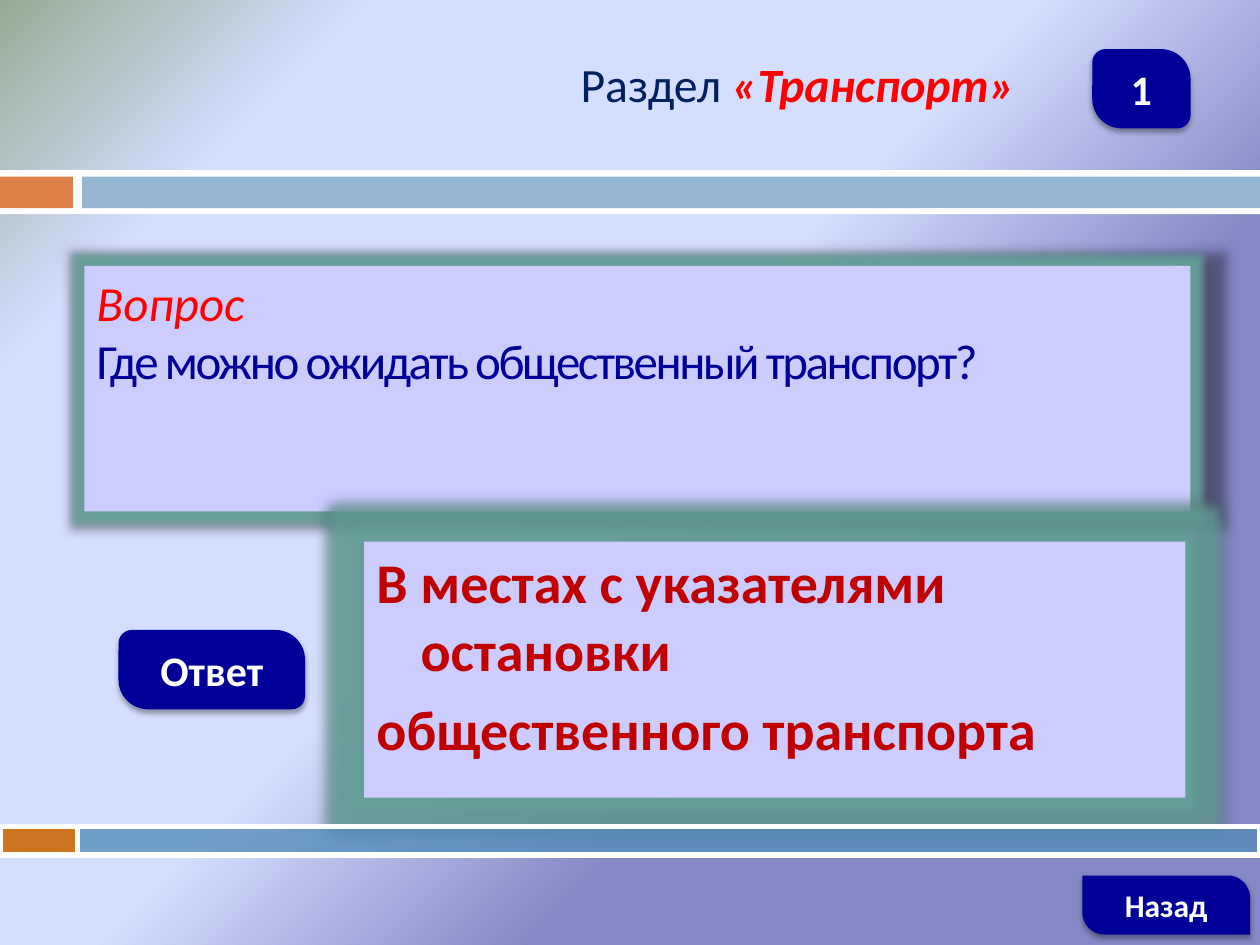
from pptx import Presentation
from pptx.dml.color import RGBColor
from pptx.enum.shapes import MSO_SHAPE
from pptx.enum.text import MSO_ANCHOR, MSO_AUTO_SIZE, PP_ALIGN
from pptx.oxml import parse_xml
from pptx.oxml.ns import nsdecls
from pptx.util import Cm, Pt

FONT = "Calibri"
C = {"white": "FFFFFF", "black": "000000", "orange": "DD8047", "blue": "94B6D2",
     "panel": "CCCCFF", "navy": "000099", "title": "002060", "red": "FF0000",
     "answer": "C00000", "glow": "66A09A", "rust": "CC6600", "steel": "558BB8"}
BACKGROUND = [(33, "8488C4"), (53, "D4DEFF"), (83, "D4DEFF"), (100, "96AB94")]

# Boxes are left, top, width, height in cm
TITLE_BOX = (10.72, 0.79, 10.72, 1.78)
TITLE = [("Раздел ", {"size": 27.3, "color": "title"}),
         ("«Транспорт»", {"size": 27.3, "color": "red", "bold": True, "italic": True})]

TOP_BARS = [((0, 3.43, 25.4, 0.89), "white"),
            ((0, 3.56, 1.47, 0.64), "orange"),
            ((1.65, 3.56, 23.75, 0.64), "blue")]
BOTTOM_BARS = [((0, 16.66, 1.57, 0.58), "rust", 87),
               ((1.57, 16.66, 23.83, 0.58), "steel", 78)]

ANSWER_FMT = {"size": 32, "color": "answer", "bold": True}
PANELS = [
    {"box": (1.7, 5.36, 22.3, 4.95), "glow": 5, "scale": 102, "gap": 0,
     "lines": [("Вопрос", {"size": 28, "color": "red", "italic": True}),
               ("Где можно ожидать общественный транспорт?",
                {"size": 28, "color": "navy", "spacing": -1.4})]},
    {"box": (7.34, 10.92, 16.56, 5.16), "glow": 14, "scale": 100, "gap": 7,
     "lines": [("В местах с указателями остановки", ANSWER_FMT),
               ("общественного транспорта", ANSWER_FMT)]},
]

# Text, box, font size, rounding of the first corner pair
BUTTONS = [("Ответ", (2.39, 12.7, 3.76, 1.6), 24, 0.167),
           ("Назад", (21.82, 17.65, 3.38, 1.19), 18, 0),
           ("1", (22.02, 0.99, 1.98, 1.6), 24, 0.167)]


def rgb(name):
    return RGBColor.from_string(C[name])


def add_run(p, text, fmt):
    r = p.add_run()
    r.text = text
    r.font.name = FONT
    for key, value in fmt.items():
        if key == "color":
            r.font.color.rgb = rgb(value)
        elif key == "spacing":
            r.font._element.set("spc", str(round(value * 100)))
        else:
            setattr(r.font, key, Pt(value) if key == "size" else value)


def add_block(slide, box, color, kind=MSO_SHAPE.RECTANGLE):
    sp = slide.shapes.add_shape(kind, *map(Cm, box))
    sp.shadow.inherit = False
    sp.fill.solid()
    sp.fill.fore_color.rgb = rgb(color)
    sp.line.fill.background()
    return sp


def set_effects(sp, blur, dist, alpha, scale=100, glow=0):
    """Give the shape an outer shadow and, if glow is set, a halo (points, percent)."""
    halo = (f'<a:glow rad="{Pt(glow)}"><a:srgbClr val="{C["glow"]}">'
            '<a:alpha val="80000"/></a:srgbClr></a:glow>') if glow else ""
    new = parse_xml(
        f'<a:effectLst {nsdecls("a")}>{halo}'
        f'<a:outerShdw blurRad="{Pt(blur)}" dist="{Pt(dist)}" dir="5400000" '
        f'sx="{scale * 1000}" sy="{scale * 1000}" algn="tl" rotWithShape="0">'
        f'<a:srgbClr val="{C["black"]}"><a:alpha val="{alpha * 1000}"/></a:srgbClr>'
        '</a:outerShdw></a:effectLst>')
    props = sp._element.spPr
    old = props.find("{*}effectLst")
    props.replace(old, new)


def set_background(slide):
    slide.background.fill.solid()
    props = slide._element.cSld.bg.bgPr
    stops = "".join(f'<a:gs pos="{pos * 1000}"><a:srgbClr val="{color}"/></a:gs>'
                    for pos, color in BACKGROUND)
    grad = parse_xml(
        f'<a:gradFill {nsdecls("a")} rotWithShape="1"><a:gsLst>{stops}</a:gsLst>'
        '<a:path path="circle"><a:fillToRect l="100000" t="100000"/></a:path>'
        '</a:gradFill>')
    props.replace(props[0], grad)


def add_title(slide):
    sp = slide.shapes.title
    sp.left, sp.top, sp.width, sp.height = map(Cm, TITLE_BOX)
    tf = sp.text_frame
    tf.auto_size = MSO_AUTO_SIZE.NONE
    tf.vertical_anchor = MSO_ANCHOR.MIDDLE
    p = tf.paragraphs[0]
    p.alignment = PP_ALIGN.CENTER
    for text, fmt in TITLE:
        add_run(p, text, fmt)


def add_panel(slide, panel):
    sp = add_block(slide, panel["box"], "panel")
    set_effects(sp, 5, 0, 40, panel["scale"], panel["glow"])
    tf = sp.text_frame
    tf.word_wrap = True
    tf.vertical_anchor = MSO_ANCHOR.TOP
    for i, (text, fmt) in enumerate(panel["lines"]):
        p = tf.add_paragraph() if i else tf.paragraphs[0]
        p.alignment = PP_ALIGN.LEFT
        p.space_before = Pt(panel["gap"] if i else 0)
        props = p._p.get_or_add_pPr()
        props.set("marL", str(Cm(0.89)))
        props.set("indent", str(Cm(-0.89)))
        add_run(p, text, fmt)


def add_button(slide, text, box, size, corner):
    sp = add_block(slide, box, "navy", MSO_SHAPE.ROUND_2_DIAG_RECTANGLE)
    sp.adjustments[0], sp.adjustments[1] = corner, 0.373
    set_effects(sp, 3, 2, 35)
    tf = sp.text_frame
    tf.vertical_anchor = MSO_ANCHOR.MIDDLE
    p = tf.paragraphs[0]
    p.alignment = PP_ALIGN.CENTER
    add_run(p, text, {"size": size, "color": "white", "bold": True})


def add_bottom_bar(slide, box, color, alpha):
    sp = add_block(slide, box, color)
    sp.line.color.rgb = rgb("white")
    sp.line.width = Pt(3)
    clr = sp._element.spPr.find("{*}solidFill")[0]
    clr.append(parse_xml(f'<a:alpha {nsdecls("a")} val="{alpha * 1000}"/>'))


def main():
    prs = Presentation()
    prs.slide_width, prs.slide_height = Cm(25.4), Cm(19.05)
    slide = prs.slides.add_slide(prs.slide_layouts[5])
    set_background(slide)
    add_title(slide)
    for box, color in TOP_BARS:
        add_block(slide, box, color)
    for panel in PANELS:
        add_panel(slide, panel)
    for button in BUTTONS:
        add_button(slide, *button)
    for bar in BOTTOM_BARS:
        add_bottom_bar(slide, *bar)
    prs.save("out.pptx")


if __name__ == "__main__":
    main()
